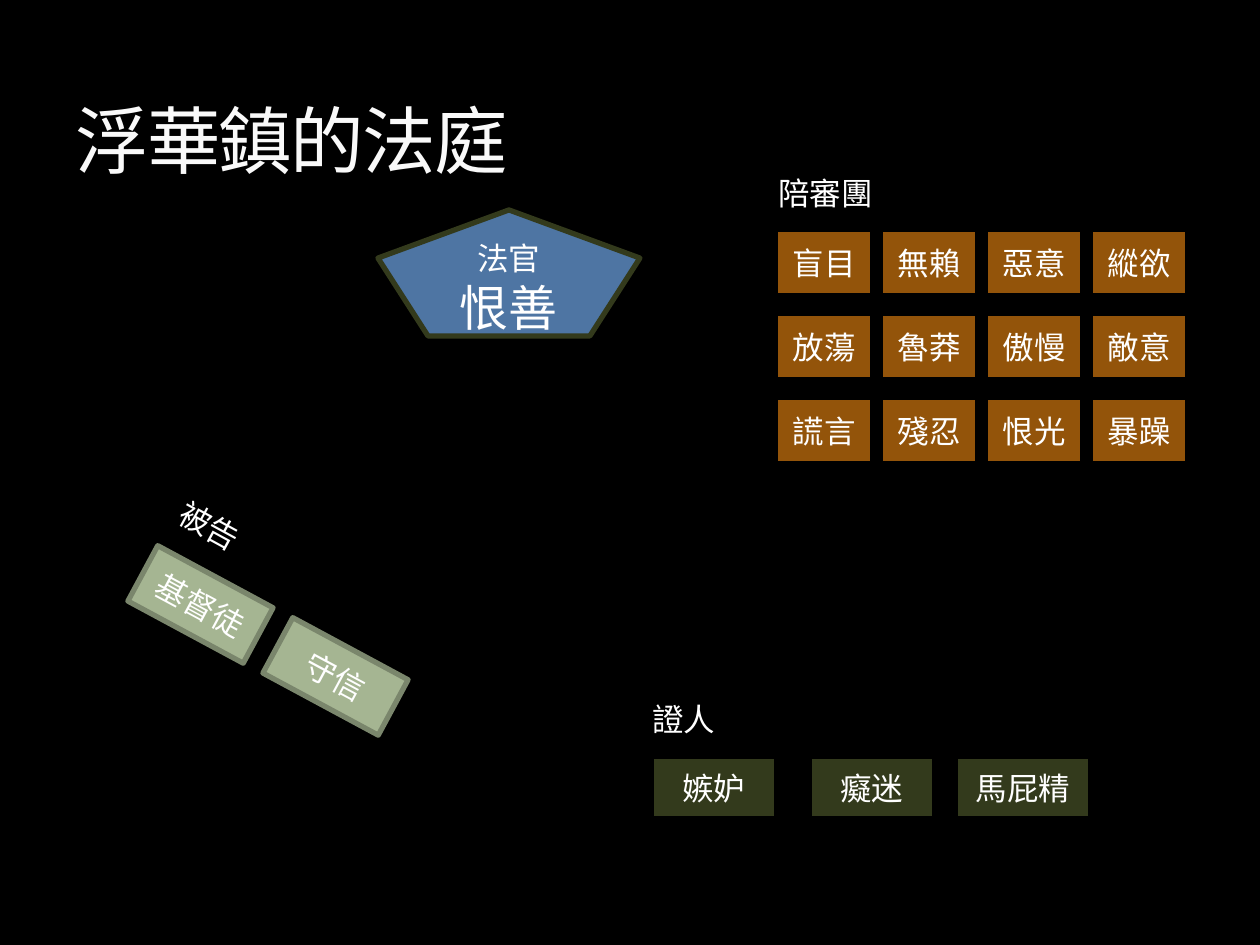
from lxml import etree
from pptx import Presentation
from pptx.dml.color import RGBColor
from pptx.enum.shapes import MSO_SHAPE
from pptx.enum.text import MSO_ANCHOR, MSO_AUTO_SIZE, PP_ALIGN
from pptx.oxml import parse_xml
from pptx.util import Pt

RECTANGLE, PENTAGON = MSO_SHAPE.RECTANGLE, MSO_SHAPE.REGULAR_PENTAGON
MIDDLE, BOTTOM = MSO_ANCHOR.MIDDLE, MSO_ANCHOR.BOTTOM
CENTER = PP_ALIGN.CENTER
GROW = MSO_AUTO_SIZE.SHAPE_TO_FIT_TEXT
EMU_PER_PX = 914400 / 126

THEME = {
    "font": "Vollkorn", "background": "000000", "text": "FFFFFF",
    "title": "F9F9F9", "title_outline": "3C4422",
    "judge": "4E75A3", "judge_line": "333A1C",
    "witness": "333A1C", "juror": "93540A", "black_line": "000000",
    "defendant": "A5B592", "defendant_line": "7A866C",
    "title_size": 42, "name_size": 28, "body_size": 18,
}


def add_run(paragraph, text, size="body_size", color="text"):
    run = paragraph.add_run()
    run.text = text
    run.font.name = THEME["font"]
    run.font.size = Pt(THEME[size])
    run.font.color.rgb = RGBColor.from_string(THEME[color])
    return run


def add_seat(box, fill, line, line_width, text, geometry=RECTANGLE, rotation=0):
    """Add a filled shape with centred text; return the shape's paragraph."""
    shape = slide.shapes.add_shape(geometry, *[round(v * EMU_PER_PX) for v in box])
    shape.shadow.inherit = False
    shape.rotation = rotation
    shape.fill.solid()
    shape.fill.fore_color.rgb = RGBColor.from_string(THEME[fill])
    shape.line.color.rgb = RGBColor.from_string(THEME[line])
    shape.line.width = Pt(line_width)
    shape.text_frame.word_wrap = True
    shape.text_frame.vertical_anchor = MIDDLE
    paragraph = shape.text_frame.paragraphs[0]
    paragraph.alignment = CENTER
    add_run(paragraph, text)
    return paragraph


presentation = Presentation()
presentation.slide_width = round(1260 * EMU_PER_PX)
presentation.slide_height = round(945 * EMU_PER_PX)
slide = presentation.slides.add_slide(presentation.slide_layouts[6])
slide.background.fill.solid()
slide.background.fill.fore_color.rgb = RGBColor.from_string(THEME["background"])

# Title
title = slide.shapes.add_textbox(*[round(v * EMU_PER_PX) for v in (63, 21, 1134, 168)])
title.text_frame.word_wrap = True
title.text_frame.vertical_anchor = BOTTOM
title_run = add_run(title.text_frame.paragraphs[0], "浮華鎮的法庭", "title_size", "title")
title_properties = title_run.font.fill and title_run._r.get_or_add_rPr()
title_properties.set("spc", "-100")
title_properties.insert(0, parse_xml(
    '<a:ln xmlns:a="http://schemas.openxmlformats.org/drawingml/2006/main" w="3175">'
    f'<a:solidFill><a:srgbClr val="{THEME["title_outline"]}"><a:alpha val="25000"/>'
    '</a:srgbClr></a:solidFill></a:ln>'))

# Judge
judge = add_seat((378, 210, 262, 126), "judge", "judge_line", 3, "法官", PENTAGON)
judge.add_line_break()
add_run(judge, "恨善", "name_size")

# Witnesses
for left, width, name in [(651, 126, "嫉妒"), (809, 126, "癡迷"), (955, 136, "馬屁精")]:
    add_seat((left, 756, width, 63), "witness", "black_line", 3, name)

# Defendants
for left, top, name in [(135, 573, "基督徒"), (270, 645, "守信")]:
    add_seat((left, top, 131, 63), "defendant", "defendant_line", 3, name, rotation=28.3)

# Jury
JURY = [
    ["盲目", "無賴", "惡意", "縱欲"],
    ["放蕩", "魯莽", "傲慢", "敵意"],
    ["謊言", "殘忍", "恨光", "暴躁"],
]
for row, names in enumerate(JURY):
    for column, name in enumerate(names):
        add_seat((777 + 105 * column, 231 + 84 * row, 94, 63),
                 "juror", "black_line", 1.5, name)

# Group labels
for box, text, rotation, wrap in [
    ((766, 168, 158, 53), "陪審團", 0, True),
    ((640, 694, 147, 50), "證人", 0, True),
    ((166, 501, 89, 50), "被告", 28.7, False),
]:
    label = slide.shapes.add_textbox(*[round(v * EMU_PER_PX) for v in box])
    label.rotation = rotation
    label.text_frame.word_wrap = wrap
    label.text_frame.auto_size = GROW
    add_run(label.text_frame.paragraphs[0], text)

presentation.save("out.pptx")
